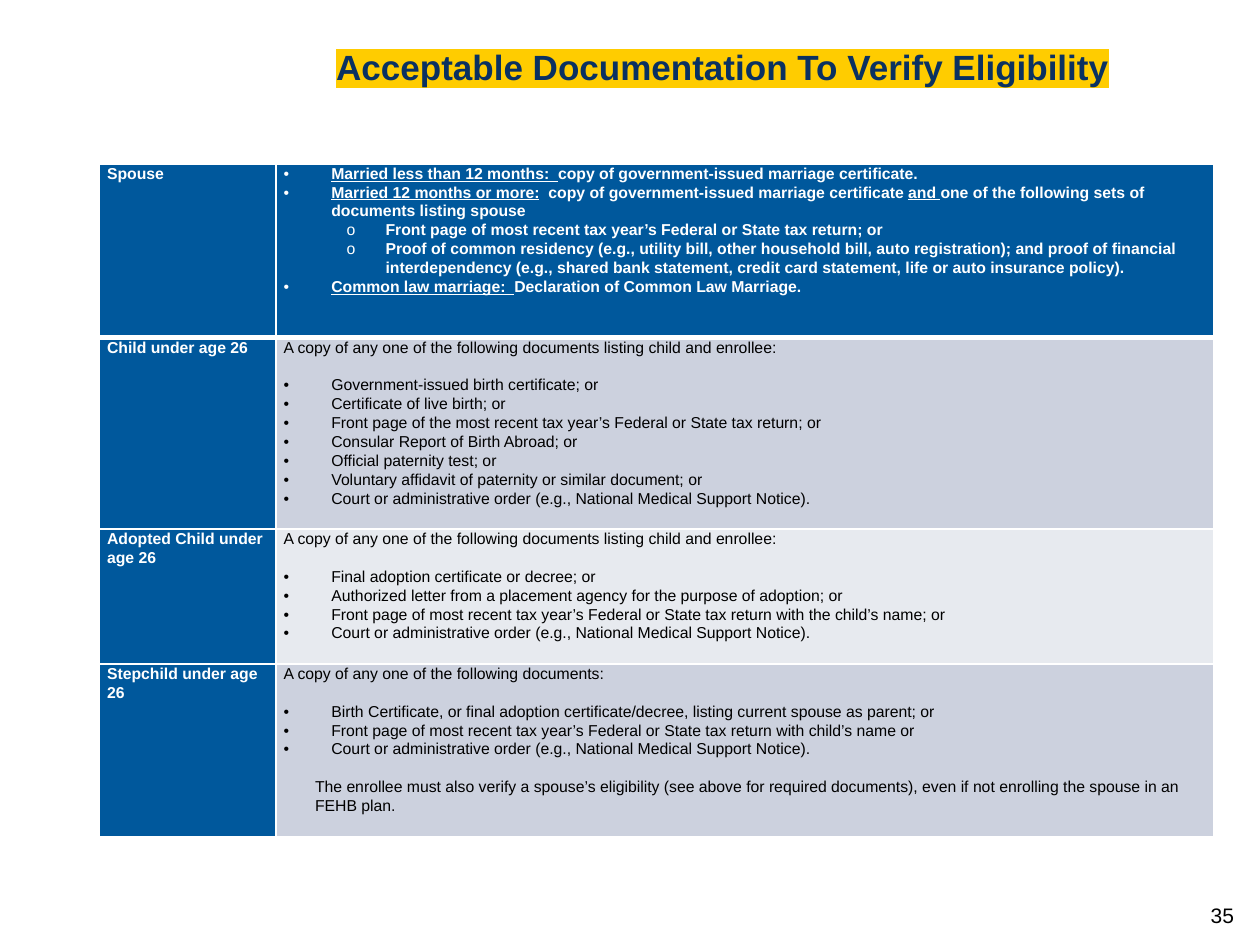
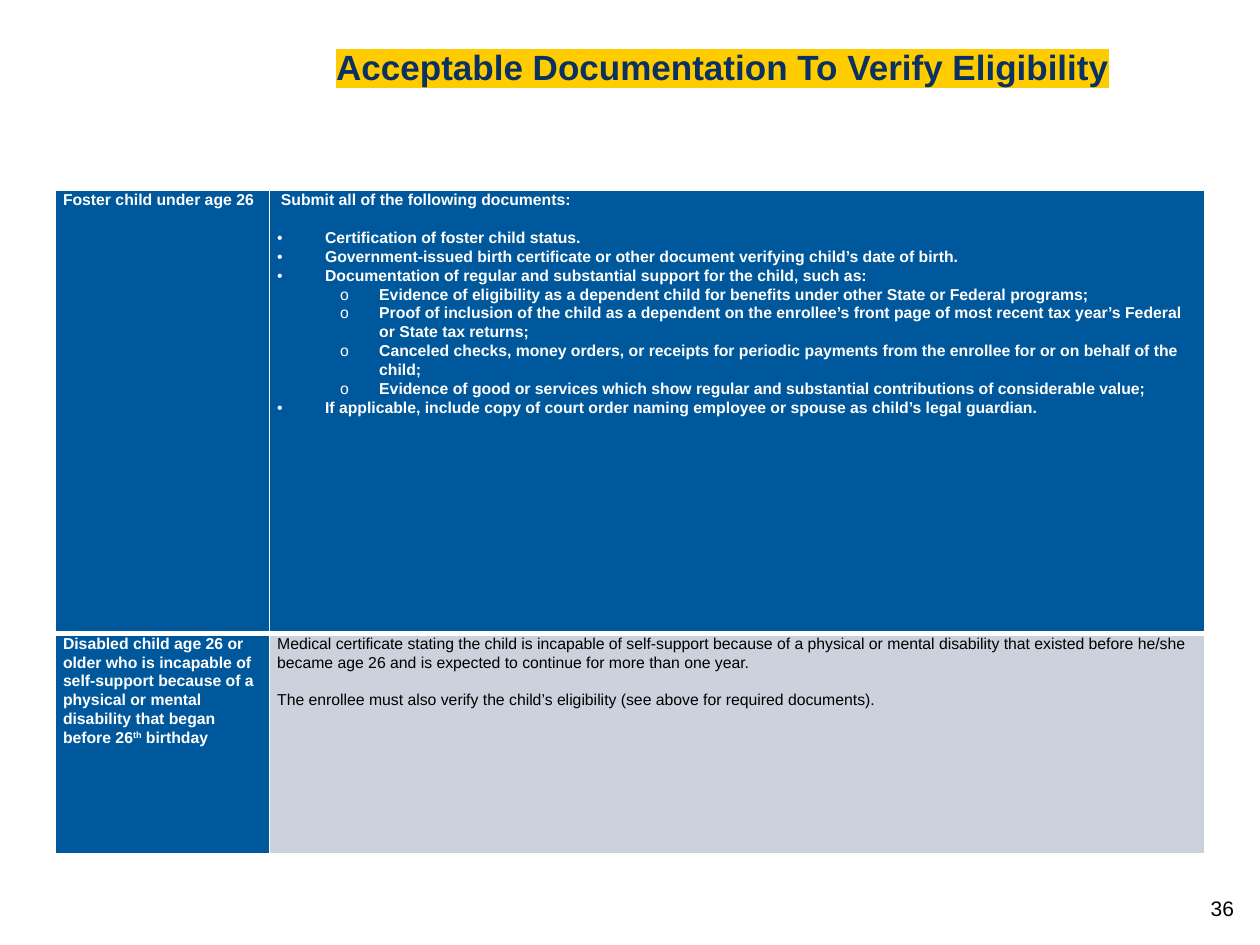
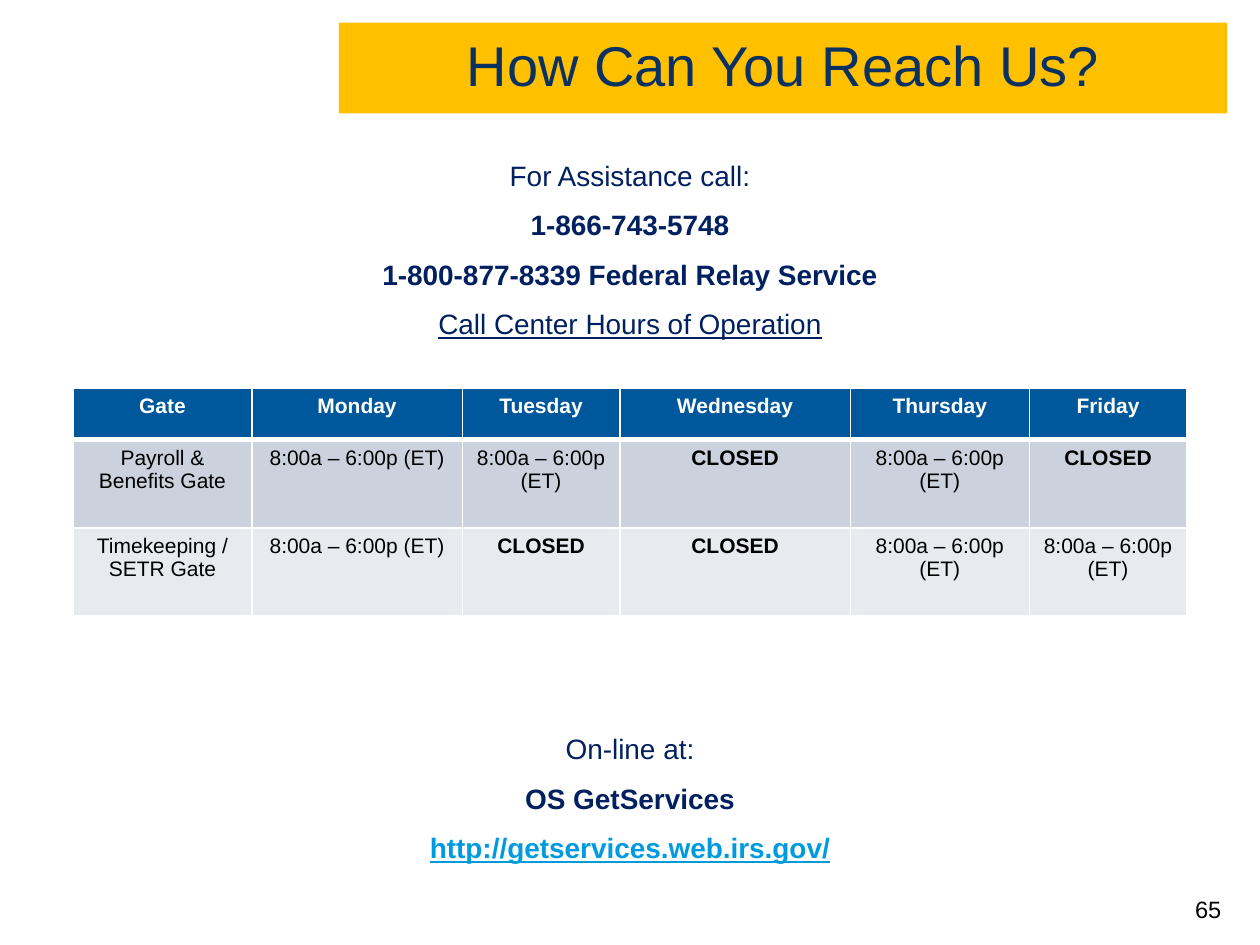
"""Builds three benefits slides: two eligibility tables and a contact page."""
from dataclasses import dataclass
from typing import NamedTuple

from lxml.etree import SubElement
from pptx import Presentation
from pptx.dml.color import RGBColor as Rgb
from pptx.enum.shapes import MSO_SHAPE as Shape
from pptx.enum.text import MSO_ANCHOR as Anchor, PP_ALIGN as Align
from pptx.oxml import parse_xml
from pptx.oxml.ns import nsdecls, qn
from pptx.util import Inches, Pt


@dataclass(frozen=True)
class Theme:
    font: str = "Arial"
    navy: str = "0A3161"
    ink: str = "002060"
    link: str = "009BDE"
    blue: str = "00589C"
    bands: tuple = ("CCD1DE", "E7EAEF")
    mark: str = "FFCC00"
    gold: str = "FFC000"
    white: str = "FFFFFF"
    black: str = "000000"
    small: float = 9
    cell: float = 12
    page: float = 13.5
    body: float = 16
    head: float = 20
    title: float = 32
    gap: float = 10.8
    lead: float = 9


T = Theme()


class Box(NamedTuple):
    left: float
    top: float
    width: float
    height: float

    def emu(self) -> list:
        return [Inches(v) for v in self]


class Run(NamedTuple):
    text: str
    under: bool = False
    high: bool = False


class Mark(NamedTuple):
    char: str
    left: float
    hang: float


DOT = Mark("•", 0.38, 0.38)
RING = Mark("o", 0.81, 0.31)


@dataclass(frozen=True)
class Line:
    runs: tuple
    mark: Mark | None = None
    before: float = 0
    left: float = 0
    bold: bool = False
    color: str = T.ink


@dataclass(frozen=True)
class Look:
    size: float
    align: Align = Align.LEFT
    space: float = 1.0


@dataclass(frozen=True)
class Grid:
    box: Box
    cols: tuple
    rows: tuple
    look: Look
    side: float
    rim: float
    labels: bool


def say(text: str, **more) -> Line:
    return Line((Run(text),), **more)


def dots(*texts: str) -> list[Line]:
    """Makes bulleted lines, the first set apart from the line above."""
    return [say(t, mark=DOT, before=0 if i else T.gap) for i, t in enumerate(texts)]


def rings(*texts: str) -> list[Line]:
    return [say(t, mark=RING) for t in texts]


def write(frame, lines: list[Line], look: Look, color: str = "", bold: bool = False) -> None:
    """Writes lines into a text frame; color and bold override the lines."""
    frame.word_wrap = True
    for i, line in enumerate(lines):
        para = frame.add_paragraph() if i else frame.paragraphs[0]
        para.alignment = look.align
        para.line_spacing = look.space
        if i and line.before:
            para.space_before = Pt(line.before)
        props = para._p.get_or_add_pPr()
        if line.mark:
            props.set("marL", str(Inches(line.mark.left)))
            props.set("indent", str(-Inches(line.mark.hang)))
            SubElement(props, qn("a:buFont")).set("typeface", T.font)
            SubElement(props, qn("a:buChar")).set("char", line.mark.char)
        elif line.left:
            props.set("marL", str(Inches(line.left)))
        font = para.font
        font.name, font.size = T.font, Pt(look.size)
        font.bold = bold or line.bold
        font.color.rgb = Rgb.from_string(color or line.color)
        for part in line.runs:
            run = para.add_run()
            run.text = part.text
            if part.under:
                run.font.underline = True
            if part.high:
                run._r.get_or_add_rPr().set("baseline", "30000")


def note(slide, box: Box, lines: list[Line], look: Look, anchor: Anchor = Anchor.TOP):
    frame = slide.shapes.add_textbox(*box.emu()).text_frame
    frame.vertical_anchor = anchor
    write(frame, lines, look)
    return frame


def head(slide) -> None:
    """Adds the highlighted heading of the eligibility slides."""
    line = say("Acceptable Documentation To Verify Eligibility", bold=True, color=T.navy)
    frame = note(slide, Box(2.57, 0.35, 6.94, 0.51), [line], Look(T.head, space=0.9))
    props = frame.paragraphs[0].runs[0]._r.get_or_add_rPr()
    glow = SubElement(props, qn("a:highlight"))
    SubElement(glow, qn("a:srgbClr")).set("val", T.mark)


def edge(cell, base: float) -> None:
    """Draws white cell borders, with the bottom one of the given weight."""
    props = cell._tc.get_or_add_tcPr()
    for i, side in enumerate("LRTB"):
        wide = Pt(base if side == "B" else 1)
        props.insert(i, parse_xml(
            f'<a:ln{side} {nsdecls("a")} w="{wide}"><a:solidFill>'
            f'<a:srgbClr val="{T.white}"/></a:solidFill></a:ln{side}>'))


def table(slide, grid: Grid, data: list) -> None:
    """Draws a table with a dark first row and, if asked, a dark first column."""
    tab = slide.shapes.add_table(len(grid.rows), len(grid.cols), *grid.box.emu()).table
    for col, wide in zip(tab.columns, grid.cols):
        col.width = Inches(wide)
    for r, (row, tall) in enumerate(zip(tab.rows, grid.rows)):
        row.height = Inches(tall)
        for c, (cell, lines) in enumerate(zip(row.cells, data[r])):
            dark = r == 0 or (grid.labels and c == 0)
            cell.margin_left = cell.margin_right = Inches(grid.side)
            cell.margin_top = cell.margin_bottom = Inches(grid.rim)
            cell.fill.solid()
            cell.fill.fore_color.rgb = Rgb.from_string(T.blue if dark else T.bands[(r - 1) % 2])
            edge(cell, 1 if r else 3)
            write(cell.text_frame, lines, grid.look, T.white if dark else T.black, dark)


def proof(slide, box: Box, cols: tuple, rows: tuple, data: list) -> None:
    head(slide)
    table(slide, Grid(box, cols, rows, Look(T.small, space=1.07), 0.06, 0, True), data)


def page(slide, box: Box, num: str, look: Look) -> None:
    note(slide, box, [say(num, color=T.black)], look, Anchor.MIDDLE)


COPY = "A copy of any one of the following documents listing child and enrollee:"
ORDER = "Court or administrative order (e.g., National Medical Support Notice)."


def family(slide) -> None:
    """Lists the documents for spouse and children."""
    spouse = [
        Line((Run("Married less than 12 months:  ", True),
              Run("copy of government-issued marriage certificate.")), DOT),
        Line((Run("Married 12 months or more:", True),
              Run("  copy of government-issued marriage certificate "),
              Run("and ", True),
              Run("one of the following sets of documents listing spouse")), DOT),
        *rings(
            "Front page of most recent tax year’s Federal or State tax return; or",
            "Proof of common residency (e.g., utility bill, other household bill, auto "
            "registration); and proof of financial interdependency (e.g., shared bank "
            "statement, credit card statement, life or auto insurance policy)."),
        Line((Run("Common law marriage:  ", True),
              Run("Declaration of Common Law Marriage.")), DOT),
    ]
    child = [say(COPY), *dots(
        "Government-issued birth certificate; or",
        "Certificate of live birth; or",
        "Front page of the most recent tax year’s Federal or State tax return; or",
        "Consular Report of Birth Abroad; or",
        "Official paternity test; or",
        "Voluntary affidavit of paternity or similar document; or",
        ORDER)]
    adopted = [say(COPY), *dots(
        "Final adoption certificate or decree; or",
        "Authorized letter from a placement agency for the purpose of adoption; or",
        "Front page of most recent tax year’s Federal or State tax return with the child’s name; or",
        ORDER)]
    step = [
        say("A copy of any one of the following documents:"),
        *dots(
            "Birth Certificate, or final adoption certificate/decree, listing current spouse as parent; or",
            "Front page of most recent tax year’s Federal or State tax return with child’s name or",
            ORDER),
        say("The enrollee must also verify a spouse’s eligibility (see above for required "
            "documents), even if not enrolling the spouse in an FEHB plan.",
            before=T.gap, left=0.25),
    ]
    proof(slide, Box(0.79, 1.3, 8.84, 5.34), (1.4, 7.44), (1.38, 1.52, 1.07, 1.37), [
        ([say("Spouse")], spouse),
        ([say("Child under age 26")], child),
        ([say("Adopted Child under age 26")], adopted),
        ([say("Stepchild under age 26")], step),
    ])
    page(slide, Box(9.51, 7.11, 0.41, 0.3), "35", Look(T.cell))


def foster(slide) -> None:
    """Lists the documents for foster and disabled children."""
    ward = [
        say("Submit all of the following documents:", left=0.03),
        *dots(
            "Certification of foster child status.",
            "Government-issued birth certificate or other document verifying child’s date of birth.",
            "Documentation of regular and substantial support for the child, such as:"),
        *rings(
            "Evidence of eligibility as a dependent child for benefits under other State or Federal programs;",
            "Proof of inclusion of the child as a dependent on the enrollee’s front page of "
            "most recent tax year’s Federal or State tax returns;",
            "Canceled checks, money orders, or receipts for periodic payments from the "
            "enrollee for or on behalf of the child;",
            "Evidence of good or services which show regular and substantial contributions "
            "of considerable value;"),
        say("If applicable, include copy of court order naming employee or spouse as "
            "child’s legal guardian.", mark=DOT),
    ]
    label = Line((
        Run("Disabled child age 26 or older who is incapable of self-support because of a "
            "physical or mental disability that began before 26"),
        Run("th", high=True),
        Run(" birthday")))
    medic = [
        say("Medical certificate stating the child is incapable of self-support because of a "
            "physical or mental disability that existed before he/she became age 26 and is "
            "expected to continue for more than one year."),
        say("The enrollee must also verify the child’s eligibility (see above for required "
            "documents).", before=T.gap),
    ]
    proof(slide, Box(0.44, 1.51, 9.12, 5.27), (1.7, 7.42), (3.52, 1.75), [
        ([say("Foster child under age 26")], ward),
        ([label], medic),
    ])
    page(slide, Box(9.51, 7.01, 0.49, 0.39), "36", Look(T.cell))


def reach(slide) -> None:
    """Shows phone numbers, call center hours and the web address."""
    band = slide.shapes.add_shape(Shape.RECTANGLE, *Box(2.69, 0.18, 7.05, 0.72).emu())
    band.shadow.inherit = False
    band.fill.solid()
    band.fill.fore_color.rgb = Rgb.from_string(T.gold)
    band.line.fill.background()
    band.text_frame.vertical_anchor = Anchor.MIDDLE
    write(band.text_frame, [say("How Can You Reach Us?", color=T.navy)],
          Look(T.title, Align.CENTER, 0.9))

    body = Look(T.body, Align.CENTER)
    note(slide, Box(0.46, 1.21, 9.08, 1.58), [
        say("For Assistance call:"),
        say("1-866-743-5748", before=T.lead, bold=True),
        say("1-800-877-8339 Federal Relay Service", before=T.lead, bold=True),
        Line((Run("Call Center Hours of Operation", True),), before=T.lead),
    ], body)

    time, shut = "8:00a – 6:00p (ET)", "CLOSED"
    hours = [
        ("Gate", "Monday", "Tuesday", "Wednesday", "Thursday", "Friday"),
        ("Payroll & Benefits Gate", time, time, shut, time, shut),
        ("Timekeeping / SETR Gate", time, shut, shut, time, time),
    ]
    grid = Grid(Box(0.58, 3.08, 8.84, 1.81), (1.42, 1.67, 1.25, 1.83, 1.42, 1.25),
                (0.41, 0.7, 0.7), Look(T.cell, Align.CENTER), 0.1, 0.05, False)
    table(slide, grid, [[[say(t, bold=t == shut)] for t in row] for row in hours])

    note(slide, Box(0.79, 5.76, 8.42, 1.18), [
        say("On-line at:"),
        say("OS GetServices", before=T.lead, bold=True),
        Line((Run("http://getservices.web.irs.gov/", True),),
             before=T.lead, bold=True, color=T.link),
    ], body)
    page(slide, Box(9.36, 7.05, 0.46, 0.33), "65", Look(T.page, Align.CENTER))


def main() -> None:
    deck = Presentation()
    deck.slide_width, deck.slide_height = Inches(10), Inches(7.5)
    for draw in (family, foster, reach):
        draw(deck.slides.add_slide(deck.slide_layouts[6]))
    deck.save("out.pptx")


if __name__ == "__main__":
    main()
